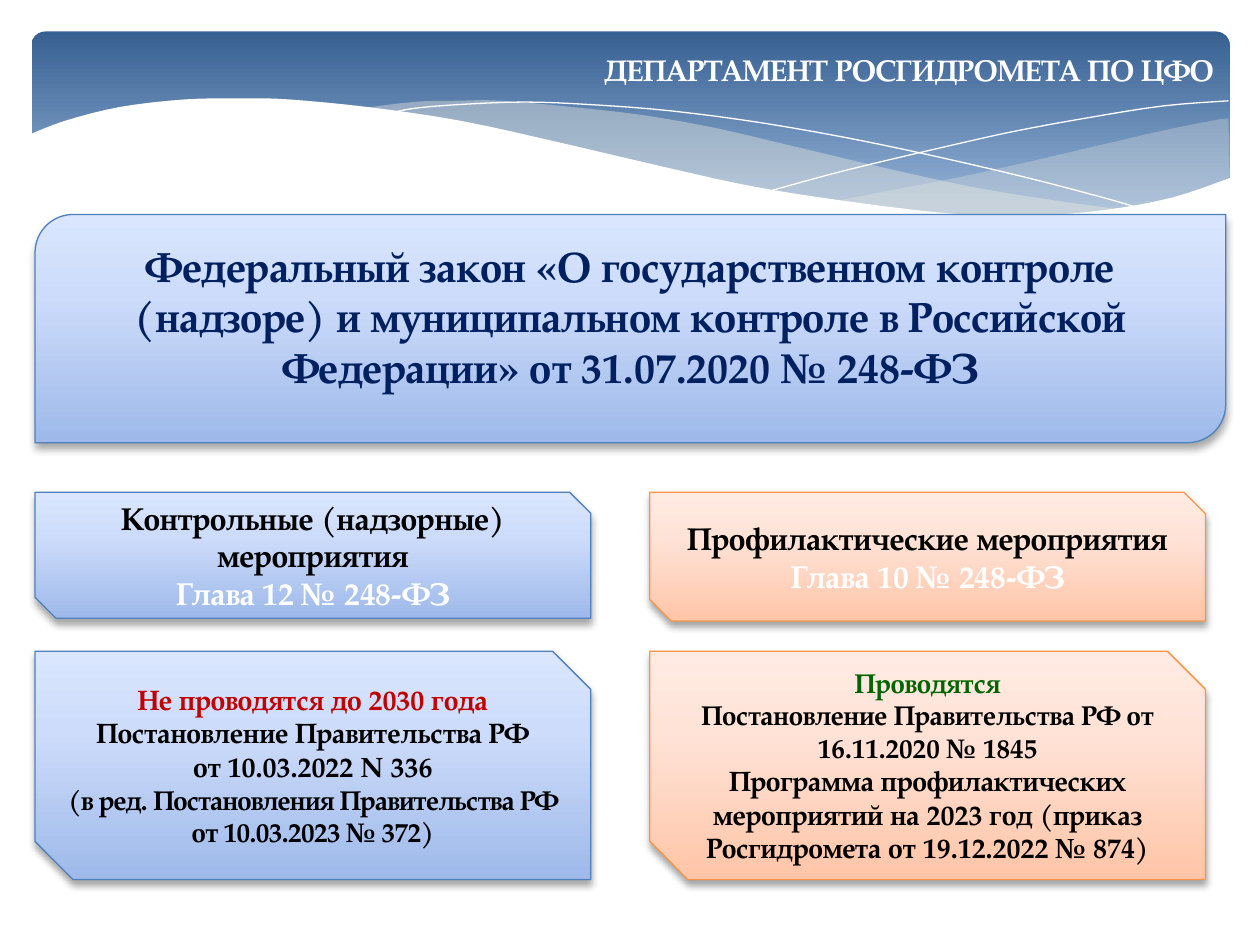
from lxml import etree
from pptx import Presentation
from pptx.dml.color import RGBColor
from pptx.enum import shapes, text
from pptx.oxml import ns
from pptx.util import Pt

FONT = "TeX Gyre Pagella"
WHITE = RGBColor(0xFF, 0xFF, 0xFF)
BLACK = RGBColor(0, 0, 0)
NAVY = RGBColor(0x00, 0x20, 0x60)
RED = RGBColor(0xC0, 0x00, 0x00)
GREEN = RGBColor(0x00, 0x64, 0x00)
IVORY = RGBColor(0xEE, 0xEC, 0xE1)
BLUE_EDGE = RGBColor(0x4F, 0x81, 0xBD)
ORANGE_EDGE = RGBColor(0xF7, 0x96, 0x46)
HEADER_STOPS = [(0, RGBColor(0x37, 0x60, 0x92)), (90, RGBColor(0x95, 0xB3, 0xD7))]
BLUE_STOPS = [(0, RGBColor(0x9E, 0xB9, 0xEA)), (65, RGBColor(0xCD, 0xDC, 0xFA)),
              (100, RGBColor(0xD9, 0xE6, 0xFE))]
ORANGE_STOPS = [(0, RGBColor(0xFF, 0xC5, 0xA8)), (65, RGBColor(0xFF, 0xE3, 0xD7)),
                (100, RGBColor(0xFF, 0xEB, 0xE3))]
BLUE = (BLUE_STOPS, BLUE_EDGE)
ORANGE = (ORANGE_STOPS, ORANGE_EDGE)

RIGHT_WAVE = [
    [(702, 67.7), (692.6, 69), (663, 75), (620, 85), (561, 98.6), (525, 105.8), (476, 115.2)],
    [(476, 115.2), (497.5, 118), (527, 121), (562, 123.5), (593, 123.8), (621, 122.4),
     (651.6, 117.4), (678, 111), (702.7, 101.5)],
]
WIDE_WAVE = [
    [(642.6, 120), (602.6, 114.5), (558, 107.3), (508, 96.5), (453, 83.5), (410, 73.4),
     (370, 66.2), (335, 62), (287, 57.6), (260, 57.6), (236, 58.3), (206, 62)],
    [(206, 62), (246, 67.7), (291, 76.3), (323, 83.5), (381.6, 97), (432.7, 108), (479, 116),
     (520, 121), (556.6, 123.8), (589, 124.6), (617, 123), (642.6, 120)],
]
FALLING_LINE = [
    [(222.5, 64.8), (236, 62), (261.4, 59.8), (299.5, 58.3), (337.7, 59.8), (383.8, 63.4),
     (437.8, 70.6), (500.4, 82), (572.4, 98), (625.7, 111.6), (653, 119.5)],
]
RISING_LINE = [
    [(441.4, 108.7), (483.8, 97.2), (538.6, 84.2), (580.3, 74.9), (623.5, 67), (665, 60.5),
     (702, 57.6)],
]
WHITE_WAVE = [
    [(703.4, 101.5), (669.6, 113), (630, 120.2), (592.6, 123), (548, 122.4), (495.4, 116.6),
     (434, 107.3), (381, 95.8), (322, 82), (262.8, 69), (210, 61.2), (165.6, 56.9),
     (139, 56.2), (105, 56.9), (68.4, 61.2), (37.4, 69), (16.6, 77)],
    [(16.6, 161.3), (703.4, 161.3)],
]


def add_element(parent, tag, **attributes):
    return etree.SubElement(parent, ns.qn(tag), attributes)


def fill_gradient(shape, stops, angle):
    shape.fill.gradient()
    gradient = shape._element.spPr.find(ns.qn("a:gradFill"))
    for child in list(gradient):
        gradient.remove(child)
    stop_list = add_element(gradient, "a:gsLst")
    for position, color in stops:
        stop = add_element(stop_list, "a:gs", pos=str(position * 1000))
        add_element(stop, "a:srgbClr", val=str(color))
    add_element(gradient, "a:lin", ang=str(angle * 60000), scaled="0")


def add_shadow(shape):
    effects = shape._element.spPr.find(ns.qn("a:effectLst"))
    shadow = add_element(effects, "a:outerShdw", blurRad=str(Pt(4)), dist=str(Pt(3)),
                         dir="5400000", rotWithShape="0")
    color = add_element(shadow, "a:srgbClr", val=str(BLACK))
    add_element(color, "a:alpha", val="35000")


def smooth_curve(points, steps=4):
    padded = [points[0], *points, points[-1]]
    curve = [points[0]]
    for a, b, c, d in zip(padded, padded[1:], padded[2:], padded[3:]):
        for step in range(1, steps + 1):
            t = step / steps
            curve.append(tuple(
                0.5 * (2 * q + (r - p) * t + (2 * p - 5 * q + 4 * r - s) * t ** 2
                       + (3 * q - p - 3 * r + s) * t ** 3)
                for p, q, r, s in zip(a, b, c, d)))
    return curve


def draw_outline(page, curves, close):
    points = [(Pt(x), Pt(y)) for curve in curves for x, y in smooth_curve(curve)]
    builder = page.shapes.build_freeform(*points[0])
    builder.add_line_segments(points[1:], close=close)
    shape = builder.convert_to_shape()
    shape.shadow.inherit = False
    return shape


def add_wave(page, curves, color, opacity=100):
    wave = draw_outline(page, curves, True)
    wave.fill.solid()
    wave.fill.fore_color.rgb = color
    wave.line.fill.background()
    if opacity < 100:
        fill_color = wave._element.spPr.find(ns.qn("a:solidFill"))[0]
        add_element(fill_color, "a:alpha", val=str(opacity * 1000))


def add_curve(page, curves):
    curve = draw_outline(page, curves, False)
    curve.fill.background()
    curve.line.color.rgb = WHITE
    curve.line.width = Pt(0)


def add_header(page):
    header = page.shapes.add_shape(shapes.MSO_SHAPE.ROUNDED_RECTANGLE,
                                   Pt(18), Pt(18), Pt(684.7), Pt(112.3))
    header.adjustments[0] = 0.07
    header.shadow.inherit = False
    header.line.fill.background()
    fill_gradient(header, HEADER_STOPS, 90)
    add_wave(page, RIGHT_WAVE, IVORY, 29)
    add_wave(page, WIDE_WAVE, IVORY, 40)
    add_curve(page, FALLING_LINE)
    add_curve(page, RISING_LINE)
    add_wave(page, WHITE_WAVE, WHITE)


def write_paragraph(para, content, size, color, spacing=0, align=text.PP_ALIGN.CENTER):
    para.alignment = align
    span = para.add_run()
    span.text = content
    for font in (para.font, span.font):
        font.name = FONT
        font.size = Pt(size)
        font.bold = True
        font.color.rgb = color
    if spacing:
        span.font._element.set("spc", str(round(spacing * 100)))


def add_title(page, content):
    title = page.shapes.title
    title.left, title.top, title.width, title.height = Pt(275), Pt(26), Pt(425.6), Pt(48)
    frame = title.text_frame
    frame.word_wrap = True
    frame.auto_size = text.MSO_AUTO_SIZE.NONE
    frame.vertical_anchor = text.MSO_ANCHOR.TOP
    write_paragraph(frame.paragraphs[0], content, 17, WHITE, align=text.PP_ALIGN.RIGHT)
    page.shapes._spTree.append(title._element)


def add_box(page, kind, bounds, scheme, lines, bottom_inset=3.6):
    box = page.shapes.add_shape(kind, *map(Pt, bounds))
    stops, edge = scheme
    box.shadow.inherit = False
    fill_gradient(box, stops, 270)
    add_shadow(box)
    box.line.color.rgb = edge
    box.line.width = Pt(0.75)
    frame = box.text_frame
    frame.word_wrap = True
    frame.vertical_anchor = text.MSO_ANCHOR.MIDDLE
    frame.margin_bottom = Pt(bottom_inset)
    for index, line in enumerate(lines):
        para = frame.add_paragraph() if index else frame.paragraphs[0]
        write_paragraph(para, *line)


def main():
    deck = Presentation()
    deck.slide_width, deck.slide_height = Pt(720), Pt(540)
    page = deck.slides.add_slide(deck.slide_layouts[5])
    add_header(page)
    rounded = shapes.MSO_SHAPE.ROUND_2_DIAG_RECTANGLE
    snipped = shapes.MSO_SHAPE.SNIP_2_DIAG_RECTANGLE
    left, right, width = 20, 371.3, 317.5
    upper, lower, tall = 281.3, 372.2, 130.4
    add_box(page, rounded, (left, 122.6, 680.4, tall), BLUE, [
        ("Федеральный закон «О государственном контроле (надзоре) и муниципальном "
         "контроле в Российской Федерации» от 31.07.2020 № 248-ФЗ", 24, NAVY)], 18)
    add_box(page, snipped, (left, upper, width, 72), BLUE, [
        ("Контрольные (надзорные) мероприятия", 18, BLACK),
        ("Глава 12 № 248-ФЗ", 18, WHITE)])
    add_box(page, snipped, (left, lower, width, tall), BLUE, [
        ("Не проводятся до 2030 года", 16, RED),
        ("Постановление Правительства РФ", 16, BLACK),
        ("от 10.03.2022 N 336", 16, BLACK),
        ("(в ред. Постановления Правительства РФ от 10.03.2023 № 372)", 15.5, BLACK, -0.3)])
    add_box(page, snipped, (right, upper, width, 73.6), ORANGE, [
        ("Профилактические мероприятия", 18, BLACK),
        ("Глава 10 № 248-ФЗ", 18, WHITE)])
    add_box(page, snipped, (right, lower, width, tall), ORANGE, [
        ("Проводятся", 15.5, GREEN),
        ("Постановление Правительства РФ от 16.11.2020 № 1845", 15.5, BLACK),
        ("Программа профилактических мероприятий на 2023 год "
         "(приказ Росгидромета от 19.12.2022 № 874)", 16, BLACK)])
    add_title(page, "ДЕПАРТАМЕНТ РОСГИДРОМЕТА ПО ЦФО")
    deck.save("out.pptx")


if __name__ == "__main__":
    main()
